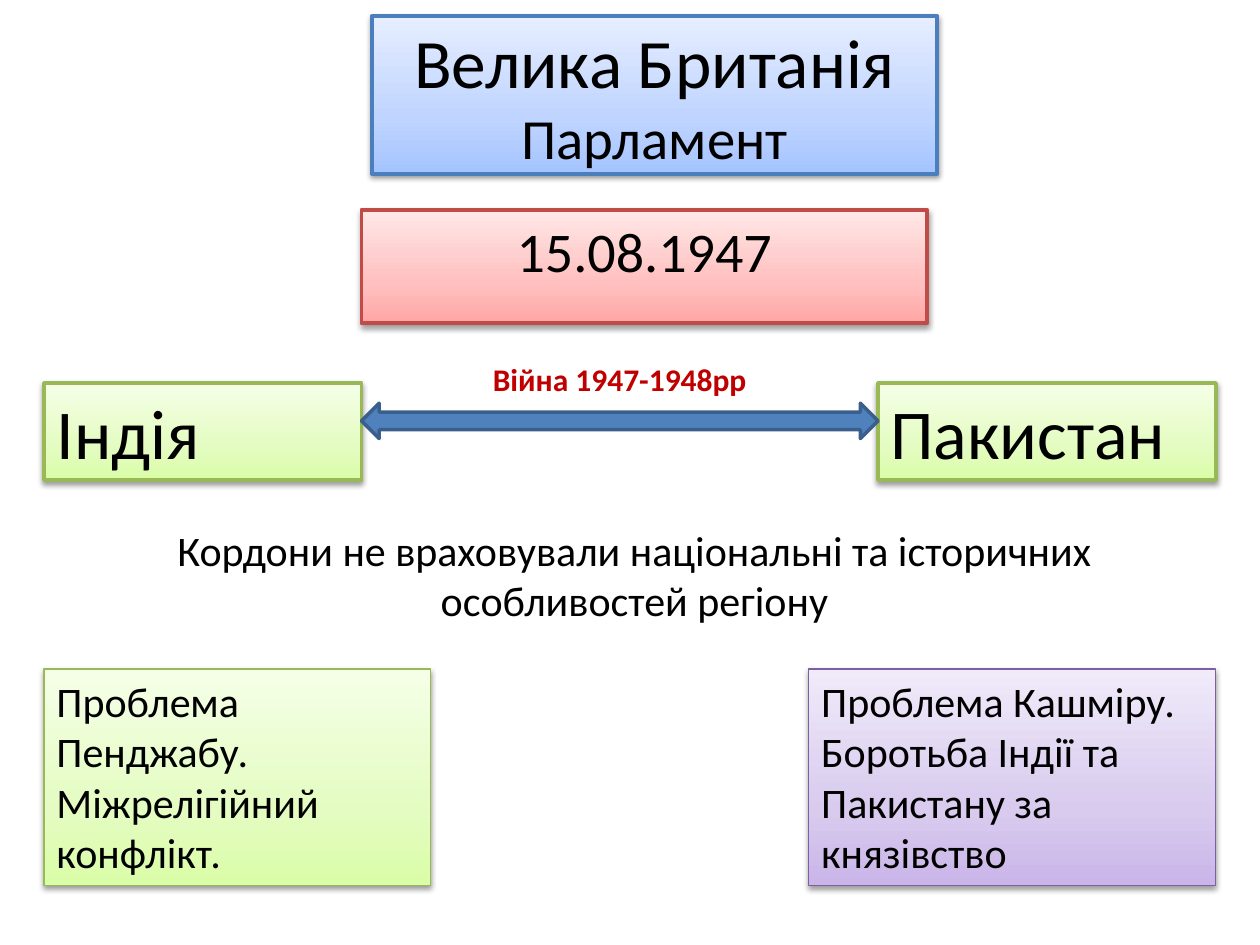
from lxml.etree import SubElement
from pptx import Presentation
from pptx.dml.color import RGBColor
from pptx.enum.shapes import MSO_SHAPE as SHAPE
from pptx.enum.text import MSO_ANCHOR as ANCHOR, PP_ALIGN as ALIGN
from pptx.oxml.ns import qn
from pptx.util import Pt

FONT = "Calibri"
COLORS = {"text": "000000", "war": "C00000", "arrow": "4F81BD", "arrow_line": "3A5F8C"}
# Each box theme: outline, then gradient from bottom to top
THEMES = {
    "blue": ("4B7EBC", ("A4C4FF", "BFD4FF", "E6EEFF")),
    "red": ("BF4C48", ("FFA6A5", "FFC0BF", "FFE7E7")),
    "green": ("98B955", ("DAFDA7", "E4FCC2", "F5FFE7")),
    "purple": ("7D60A0", ("C9B5E8", "D8CBEE", "F0EAF9")),
}
STOPS = (0, 35, 100)

# Layout in points
LEFT, RIGHT = 25.2, 694.8
TOP_W = 323.3
COUNTRY_Y, COUNTRY_H = 218.9, 55.4
PROBLEM_Y, PROBLEM_H = 382.3, 123.8
INDIA_W, PAKISTAN_W = 181.4, 193
PUNJAB_W, KASHMIR_W = 221, 232.6

# Paragraphs are lists of (line, size); lines within one share a paragraph
CENTER = {"align": ALIGN.CENTER}
BOXES = [
    # theme, (x, y, w, h), line width, paragraphs, text format
    ("blue", (212.4, 9.2, TOP_W, 90), 2.25,
     [[("Велика Британія", 39.6), ("Парламент", 32.4)]],
     {**CENTER, "anchor": ANCHOR.MIDDLE}),
    ("red", (206.6, 120, TOP_W, 64.8), 2.25,
     [[("15.08.1947", 32)]], {**CENTER, "before": 6.4}),
    ("green", (LEFT, COUNTRY_Y, INDIA_W, COUNTRY_H), 2.25, [[("Індія", 40)]], {}),
    ("green", (RIGHT - PAKISTAN_W, COUNTRY_Y, PAKISTAN_W, COUNTRY_H), 2.25,
     [[("Пакистан", 40)]], {}),
    ("green", (LEFT, PROBLEM_Y, PUNJAB_W, PROBLEM_H), 0.75,
     [[("Проблема Пенджабу.", 24)], [("Міжрелігійний конфлікт.", 24)]], {}),
    ("purple", (RIGHT - KASHMIR_W, PROBLEM_Y, KASHMIR_W, PROBLEM_H), 0.75,
     [[("Проблема Кашміру.", 24)],
      [("Боротьба Індії та Пакистану за князівство", 24)]], {}),
]
LABELS = [
    ((229.7, 202.3, 249, 29), [[("Війна 1947-1948рр", 18)]],
     {"color": "war", "bold": True}),
    ((31, 295.9, 663, 65.5),
     [[("Кордони не враховували національні та історичних особливостей регіону", 24)]], {}),
]


def rgb(name):
    return RGBColor.from_string(COLORS[name])


def write(sp, paragraphs, align=ALIGN.LEFT, anchor=ANCHOR.TOP, before=0,
          color="text", bold=False):
    tf = sp.text_frame
    tf.word_wrap = True
    tf.vertical_anchor = anchor
    for i, lines in enumerate(paragraphs):
        p = tf.add_paragraph() if i else tf.paragraphs[0]
        p.alignment = align
        p.space_before = Pt(before)
        for j, (line, size) in enumerate(lines):
            if j:
                p.add_line_break()
            r = p.add_run()
            r.text = line
            r.font.name, r.font.size, r.font.bold = FONT, Pt(size), bold
            r.font.color.rgb = rgb(color)


def add_color(parent, value):
    return SubElement(parent, qn("a:srgbClr"), val=value)


def set_gradient(sp, colors):
    """Three-stop gradient running from the bottom edge upward."""
    sp.fill.gradient()
    grad = sp.fill._xPr.find(qn("a:gradFill"))
    for child in list(grad):
        grad.remove(child)
    stops = SubElement(grad, qn("a:gsLst"))
    for pos, value in zip(STOPS, colors):
        add_color(SubElement(stops, qn("a:gs"), pos=str(pos * 1000)), value)
    SubElement(grad, qn("a:lin"), ang=str(270 * 60000), scaled="0")


def set_shadow(sp):
    sp.shadow.inherit = False
    effects = sp._element.spPr.find(qn("a:effectLst"))
    shadow = SubElement(effects, qn("a:outerShdw"), blurRad=str(Pt(3.15)),
                        dist=str(Pt(1.57)), dir=str(90 * 60000), rotWithShape="0")
    SubElement(add_color(shadow, COLORS["text"]), qn("a:alpha"), val="38000")


def add_box(s, theme, rect, line_width, paragraphs, fmt):
    line, gradient = THEMES[theme]
    sp = s.shapes.add_shape(SHAPE.RECTANGLE, *map(Pt, rect))
    set_gradient(sp, gradient)
    sp.line.color.rgb = RGBColor.from_string(line)
    sp.line.width = Pt(line_width)
    set_shadow(sp)
    write(sp, paragraphs, **fmt)


def main():
    prs = Presentation()
    prs.slide_width, prs.slide_height = Pt(720), Pt(540)
    s = prs.slides.add_slide(prs.slide_layouts[6])

    # Boxes
    for box in BOXES:
        add_box(s, *box)

    # Arrow spanning the gap between the two countries
    x = LEFT + INDIA_W
    arrow = s.shapes.add_shape(SHAPE.LEFT_RIGHT_ARROW, Pt(x), Pt(230.4),
                               Pt(RIGHT - PAKISTAN_W - x), Pt(20.2))
    arrow.shadow.inherit = False
    arrow.fill.solid()
    arrow.fill.fore_color.rgb = rgb("arrow")
    arrow.line.color.rgb = rgb("arrow_line")
    arrow.line.width = Pt(2)

    # Free text
    for rect, paragraphs, fmt in LABELS:
        write(s.shapes.add_textbox(*map(Pt, rect)), paragraphs, **CENTER, **fmt)

    prs.save("out.pptx")


if __name__ == "__main__":
    main()
